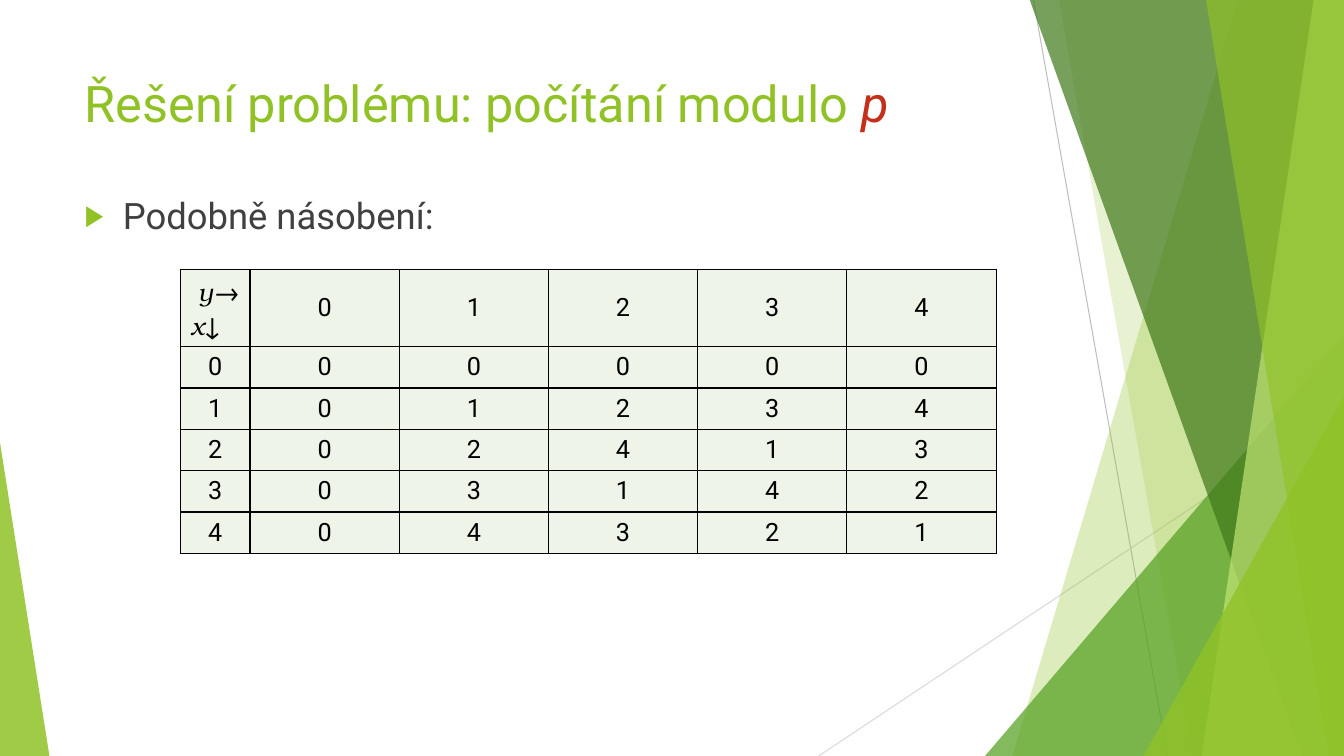
from dataclasses import dataclass

from lxml.etree import SubElement
from pptx import Presentation
from pptx.dml.color import RGBColor
from pptx.enum.shapes import MSO_CONNECTOR, MSO_SHAPE
from pptx.enum.text import MSO_ANCHOR as Anchor, PP_ALIGN as Align
from pptx.oxml.ns import qn
from pptx.util import Inches, Pt


@dataclass(frozen=True)
class Theme:
    lime: str = "90C226"
    green: str = "54A021"
    forest: str = "3F7819"
    pale_lime: str = "C0E474"
    red: str = "C42F1A"
    body: str = "404040"
    black: str = "000000"
    cell: str = "EEF4E8"
    ray_dark: str = "BFBFBF"
    ray_light: str = "D9D9D9"
    font: str = "Roboto"
    math_font: str = "TeX Gyre Bonum"
    title_size: int = 36
    body_size: int = 26
    table_size: int = 18


WIDTH, HEIGHT = 13.33, 7.5
PRIME = 5


def style_font(font, name, size, color):
    font.name, font.size = name, Pt(size)
    font.color.rgb = RGBColor.from_string(color)


def add_solid_fill(parent, color):
    fill = SubElement(parent, qn("a:solidFill"))
    SubElement(fill, qn("a:srgbClr"), val=color)


class SlideBuilder:
    def __init__(self, slide, theme):
        self.slide, self.shapes, self.theme = slide, slide.shapes, theme

    def ray(self, start, end, color):
        line = self.shapes.add_connector(
            MSO_CONNECTOR.STRAIGHT, *map(Inches, start + end))
        line.line.color.rgb = RGBColor.from_string(color)
        line.line.width = Pt(0.75)
        SubElement(line._element.spPr, qn("a:effectLst"))

    def paint(self, shape, color, opacity):
        """Fill a facet with a translucent colour, without outline or shadow."""
        shape.shadow.inherit = False
        shape.fill.solid()
        shape.fill.fore_color.rgb = RGBColor.from_string(color)
        shape.line.fill.background()
        tint = shape._element.spPr.find(qn("a:solidFill"))[0]
        SubElement(tint, qn("a:alpha"), val=str(opacity * 1000))

    def band(self, top_x, bottom_x, color, opacity):
        """Draw a facet from a slanted left side to the right slide edge."""
        top = -0.01
        outline = self.shapes.build_freeform(Inches(top_x), Inches(top))
        corners = [(WIDTH, top), (WIDTH, HEIGHT), (bottom_x, HEIGHT)]
        outline.add_line_segments([(Inches(x), Inches(y)) for x, y in corners])
        self.paint(outline.convert_to_shape(), color, opacity)

    def corner(self, left, width, height, apex, color, opacity):
        """Draw a triangle that stands on the bottom edge."""
        triangle = self.shapes.add_shape(
            MSO_SHAPE.ISOSCELES_TRIANGLE, Inches(left),
            Inches(HEIGHT - height), Inches(width), Inches(height))
        triangle.adjustments[0] = apex
        self.paint(triangle, color, opacity)

    def title(self, text, variable):
        heading = self.shapes.title
        heading.left, heading.top = Inches(0.74), Inches(0.67)
        heading.width, heading.height = Inches(9.4), Inches(0.79)
        frame = heading.text_frame
        frame.vertical_anchor = Anchor.TOP
        paragraph = frame.paragraphs[0]
        paragraph.alignment = Align.LEFT
        style_font(paragraph.font, self.theme.font, self.theme.title_size,
                   self.theme.lime)
        paragraph.add_run().text = text
        symbol = paragraph.add_run()
        symbol.text = variable
        symbol.font.italic = True
        symbol.font.color.rgb = RGBColor.from_string(self.theme.red)

    def bullet(self, text):
        body = self.shapes.add_textbox(
            Inches(0.74), Inches(1.87), Inches(9.66), Inches(5.63))
        body.text_frame.word_wrap = True
        paragraph = body.text_frame.paragraphs[0]
        paragraph.text = text
        paragraph.space_before = Pt(10)
        style_font(paragraph.font, self.theme.font, self.theme.body_size,
                   self.theme.body)
        props = paragraph._p.get_or_add_pPr()
        props.set("marL", str(Inches(0.38)))
        props.set("indent", str(Inches(-0.38)))
        marker = [("buClr", {}), ("buSzPct", {"val": "80000"}),
                  ("buFont", {"typeface": self.theme.font}),
                  ("buChar", {"char": "▶"})]
        # Bullet properties must precede the paragraph's default run properties.
        position = props.index(props.find(qn("a:defRPr")))
        for offset, (tag, attributes) in enumerate(marker):
            node = SubElement(props, qn(f"a:{tag}"), **attributes)
            if tag == "buClr":
                SubElement(node, qn("a:srgbClr"), val=self.theme.lime)
            props.insert(position + offset, node)

    def style_cell(self, cell):
        props = cell._tc.get_or_add_tcPr()
        for side in ("lnL", "lnR", "lnT", "lnB"):
            border = SubElement(props, qn(f"a:{side}"), w=str(Pt(1)))
            add_solid_fill(border, self.theme.black)
        cell.fill.solid()
        cell.fill.fore_color.rgb = RGBColor.from_string(self.theme.cell)
        cell.vertical_anchor = Anchor.MIDDLE

    def axis_label(self, cell):
        paragraph = cell.text_frame.paragraphs[0]
        style_font(paragraph.font, self.theme.math_font,
                   self.theme.table_size, self.theme.black)
        paragraph.text = " y→\vx"
        for run in paragraph.runs:
            run.font.italic = True
        paragraph.add_run().text = "↓"

    def multiplication_table(self, modulus):
        size = modulus + 1
        head_width, column_width = 0.69, 1.48
        head_height, row_height = 0.77, 0.41
        table = self.shapes.add_table(
            size, size, Inches(1.79), Inches(2.67),
            Inches(head_width + modulus * column_width),
            Inches(head_height + modulus * row_height)).table
        for index in range(size):
            table.columns[index].width = Inches(
                column_width if index else head_width)
            table.rows[index].height = Inches(
                row_height if index else head_height)
        residues = range(modulus)
        rows = [["", *residues]]
        rows += [[x, *(x * y % modulus for y in residues)] for x in residues]
        for r, row in enumerate(rows):
            for c, value in enumerate(row):
                cell = table.cell(r, c)
                self.style_cell(cell)
                if r == c == 0:
                    self.axis_label(cell)
                    continue
                paragraph = cell.text_frame.paragraphs[0]
                paragraph.text = str(value)
                paragraph.alignment = Align.CENTER
                style_font(paragraph.font, self.theme.font,
                           self.theme.table_size, self.theme.black)


def main():
    deck = Presentation()
    deck.slide_width, deck.slide_height = Inches(WIDTH), Inches(HEIGHT)
    theme = Theme()
    page = SlideBuilder(deck.slides.add_slide(deck.slide_layouts[5]), theme)

    page.ray((10.25, 0), (11.58, HEIGHT), theme.ray_dark)
    page.ray((WIDTH, 4.03), (8.12, HEIGHT), theme.ray_light)
    page.band(12.28, 10.04, theme.lime, 30)
    page.band(10.5, 11.83, theme.lime, 20)
    page.corner(9.77, 3.56, 4.17, 1, theme.green, 72)
    page.band(10.21, 12.91, theme.forest, 70)
    page.band(13.03, 11.92, theme.pale_lime, 70)
    page.band(11.96, 13.18, theme.lime, 65)
    page.corner(11.34, 1.99, 3.57, 1, theme.lime, 80)
    page.corner(0, 0.49, 3.11, 0, theme.lime, 85)

    page.title("Řešení problému: počítání modulo ", "p")
    page.bullet("Podobně násobení:")
    page.multiplication_table(PRIME)
    deck.save("out.pptx")


if __name__ == "__main__":
    main()
